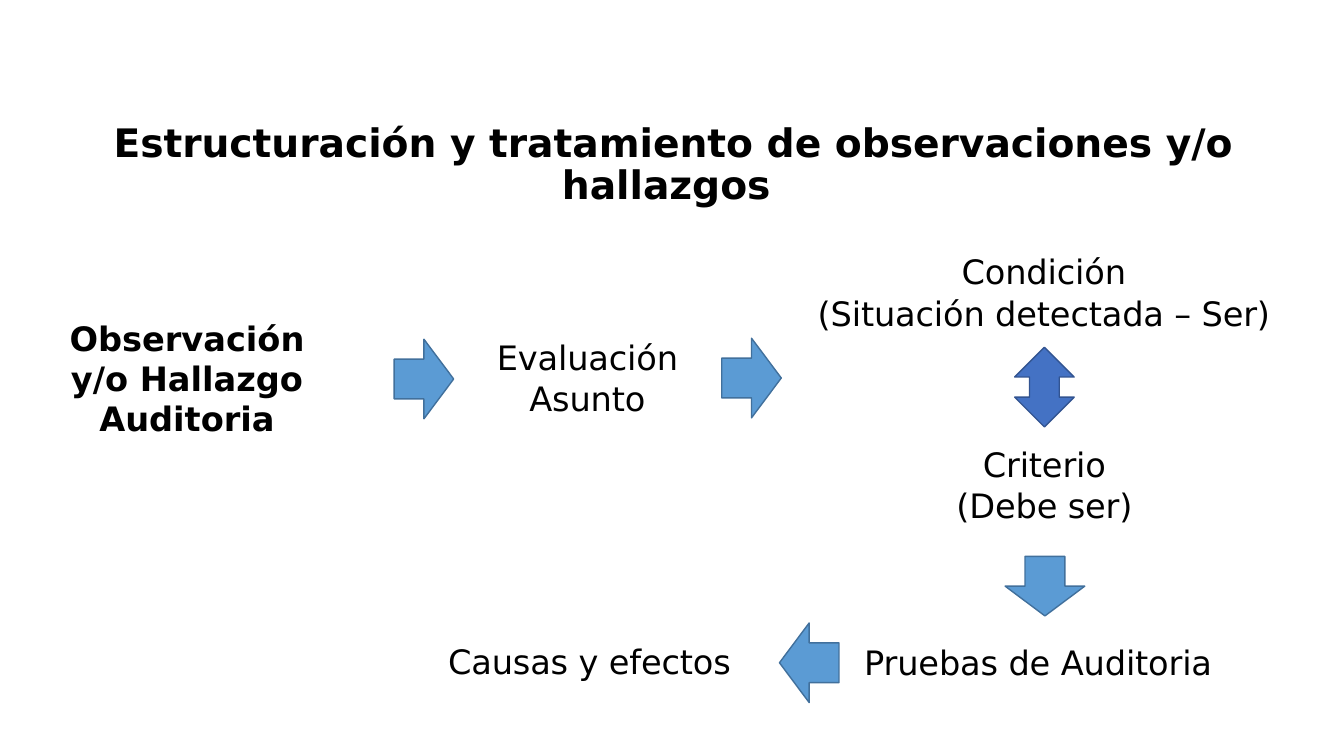
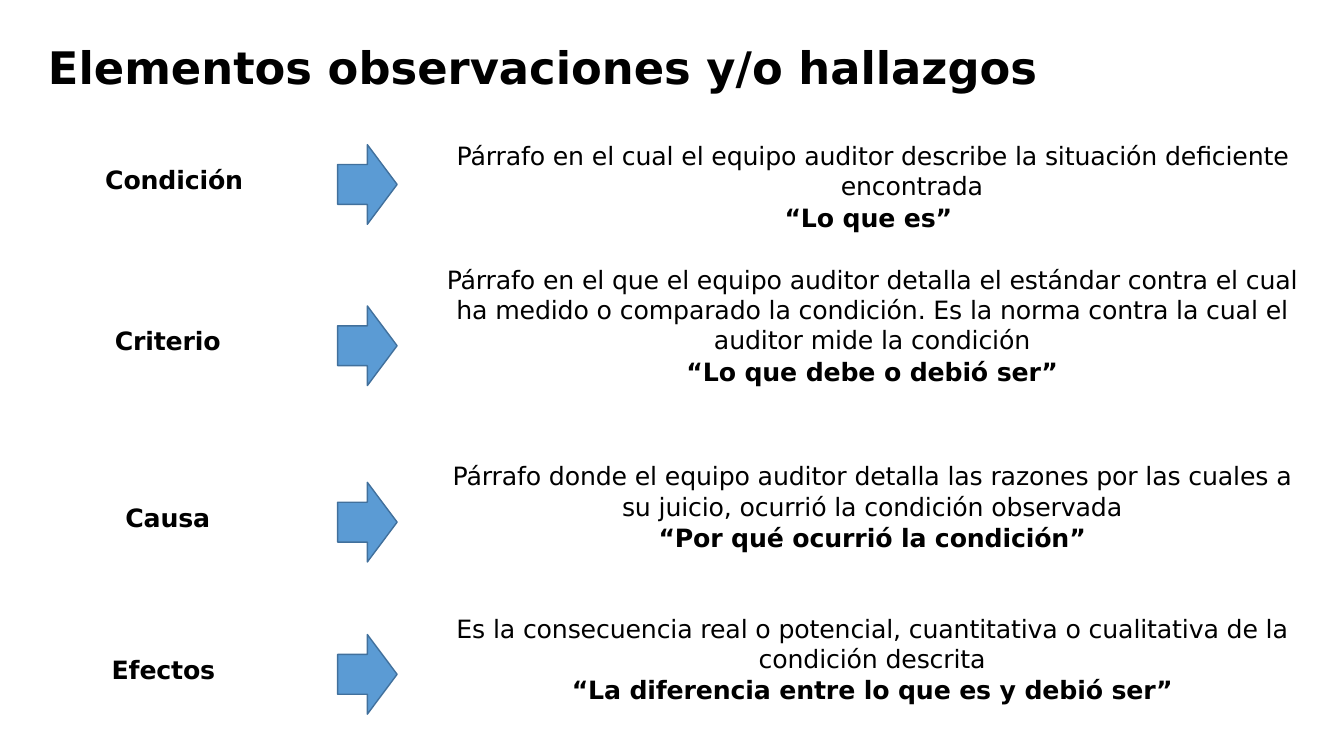
import pptx
import pptx.util
import pptx.dml.color
import pptx.enum.shapes
import pptx.enum.text

RGBColor = pptx.dml.color.RGBColor
Kind = pptx.enum.shapes.MSO_SHAPE
Align = pptx.enum.text.PP_ALIGN
Anchor = pptx.enum.text.MSO_ANCHOR
Inches = pptx.util.Inches
Pt = pptx.util.Pt

# Shared style
BLACK = RGBColor(0x00, 0x00, 0x00)
SKY = RGBColor(0x5B, 0x9B, 0xD4)
STEEL = RGBColor(0x41, 0x70, 0x9C)
BLUE = RGBColor(0x44, 0x72, 0xC4)
NAVY = RGBColor(0x32, 0x54, 0x91)
FONT = "DejaVu Sans"
WIDE, HIGH = Inches(13.33), Inches(7.5)
COLS, ROWS = 24, 15
LONG, SHORT = Inches(0.79), Inches(0.59)


class Deck:
    """Holds the style and the current slide; lengths are grid columns and rows."""

    def __init__(self):
        self.file = pptx.Presentation()
        self.file.slide_width, self.file.slide_height = WIDE, HIGH
        self.page = None

    def start(self):
        self.page = self.file.slides.add_slide(self.file.slide_layouts[6])

    def col(self, n):
        return round(WIDE * n / COLS)

    def row(self, n):
        return round(HIGH * n / ROWS)

    def frame(self, x, y, w, h):
        box = self.page.shapes.add_textbox(
            self.col(x), self.row(y), self.col(w), self.row(h))
        box.text_frame.word_wrap = True
        return box.text_frame

    def run(self, para, text, size, bold, tight=True):
        part = para.add_run()
        part.text = text
        font = part.font
        font.name, font.size, font.bold = FONT, Pt(size), bold
        font.color.rgb = BLACK
        if tight:
            part._r.get_or_add_rPr().set("spc", "-10")

    def title(self, text, y, h, size, align):
        body = self.frame(0.68, y, 22.68, h)
        body.vertical_anchor = Anchor.MIDDLE
        para = body.paragraphs[0]
        para.alignment, para.line_spacing = align, 0.9
        self.run(para, text, size, True, False)

    def head(self, lines, x, y, w, h):
        """Bold block with the usual margins."""
        body = self.frame(x, y, w, h)
        for i, text in enumerate(lines):
            para = body.add_paragraph() if i else body.paragraphs[0]
            para.alignment = Align.CENTER
            self.run(para, text, 24, True, False)

    def note(self, lines, x, y, w, h, size=24, hang=False):
        """Centred text without margins; each line is (text, bold)."""
        body = self.frame(x, y, w, h)
        body.margin_left = body.margin_right = body.margin_bottom = 0
        body.margin_top = Inches(0.01)
        for i, (text, bold) in enumerate(lines):
            para = body.add_paragraph() if i else body.paragraphs[0]
            para.alignment = Align.CENTER
            if i:
                para.space_before = Pt(1)
            if hang:
                prop = para._p.get_or_add_pPr()
                prop.set("marL", str(Inches(0.79)))
                prop.set("indent", str(-Inches(0.78)))
            self.run(para, text, size, bold)

    def arrow(self, x, y, kind=Kind.RIGHT_ARROW, fill=SKY, line=STEEL):
        """Block arrow centred on a grid point."""
        w, h = (LONG, SHORT) if kind == Kind.DOWN_ARROW else (SHORT, LONG)
        form = self.page.shapes.add_shape(
            kind, self.col(x) - w // 2, self.row(y) - h // 2, w, h)
        form.shadow.inherit = False
        form.fill.solid()
        form.fill.fore_color.rgb = fill
        form.line.color.rgb = line
        form.line.width = Pt(1)


def flow(deck):
    deck.start()
    deck.title("Estructuración y tratamiento de observaciones y/o hallazgos ",
               1.84, 2.9, 28, Align.CENTER)
    deck.head(["Observación y/o Hallazgo", "Auditoria"], 0.65, 6.2, 5.38, 2.62)

    # Steps
    steps = [
        (["Evaluación", "Asunto"], 8.69, 6.66, 3.6),
        (["Condición", "(Situación detectada – Ser)"], 14.31, 4.96, 8.66),
        (["Criterio", "(Debe ser)"], 16.85, 8.78, 3.6),
        (["Pruebas de Auditoria "], 15.3, 12.72, 6.66),
        (["Causas y efectos "], 7.9, 12.7, 5.44),
    ]
    for lines, x, y, w in steps:
        deck.note([(text, False) for text in lines], x, y, w, 0.84 * len(lines))

    # Links between steps
    deck.arrow(7.57, 7.52)
    deck.arrow(13.42, 7.5)
    deck.arrow(18.66, 11.63, Kind.DOWN_ARROW)
    deck.arrow(14.45, 13.15, Kind.LEFT_ARROW)
    deck.arrow(18.65, 7.68, Kind.UP_DOWN_ARROW, BLUE, NAVY)


def parts(deck):
    deck.start()
    deck.title("Elementos observaciones y/o hallazgos", 0.58, 1.62, 32, Align.LEFT)

    # Name, its width, arrow row, text row, hanging indent, text, motto
    items = [
        ("Condición", 4.82, 3.66, 2.76, True,
         "Párrafo en el cual el equipo auditor describe la situación "
         "deficiente encontrada", "“Lo que es” "),
        ("Criterio", 4.59, 6.86, 5.22, False,
         "Párrafo en el que el equipo auditor detalla el estándar contra el "
         "cual ha medido o comparado la condición. Es la norma contra la cual "
         "el auditor mide la condición", "“Lo que debe o debió ser”"),
        ("Causa", 4.59, 10.36, 9.12, False,
         "Párrafo donde el equipo auditor detalla las razones por las cuales "
         "a su juicio, ocurrió la condición observada",
         "“Por qué ocurrió la condición”"),
        ("Efectos ", 4.59, 13.38, 12.14, False,
         "Es la consecuencia real o potencial, cuantitativa o cualitativa de "
         "la condición descrita",
         "“La diferencia entre lo que es y debió ser”"),
    ]
    for name, w, mid, top, hang, text, motto in items:
        deck.note([(name, True)], 0.7, mid - 0.42, w, 0.64, 18)
        deck.arrow(6.56, mid)
        deck.note([(text, False), (motto, True)],
                  7.78, top, 15.59, 1.88, 18, hang)


def main():
    deck = Deck()
    flow(deck)
    parts(deck)
    deck.file.save("out.pptx")


if __name__ == "__main__":
    main()
